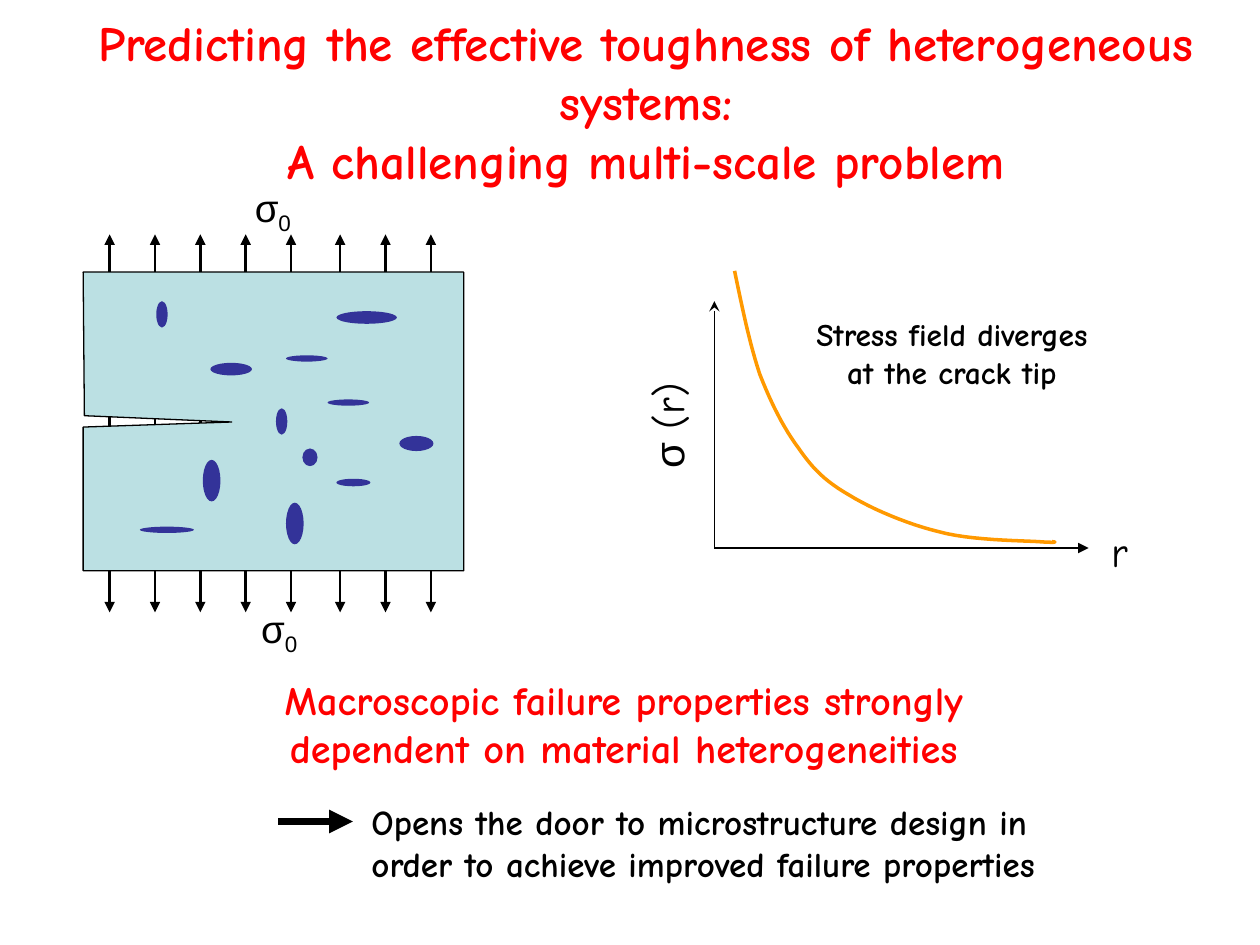
from typing import NamedTuple

from lxml import etree
from pptx import Presentation
from pptx.dml.color import RGBColor
from pptx.enum.shapes import MSO_CONNECTOR, MSO_SHAPE
from pptx.enum.text import MSO_ANCHOR, MSO_AUTO_SIZE, PP_ALIGN
from pptx.oxml.ns import qn
from pptx.util import Inches, Pt

BLACK, RED, ORANGE = "000000", "FF0000", "FF9900"
PLATE_BLUE, INCLUSION_BLUE = "BBE0E3", "333399"
COMIC, ARIAL = "Comic Neue", "Arial"


class Box(NamedTuple):
    left: float
    top: float
    width: float
    height: float


class Part(NamedTuple):
    """A stretch of text with its own font or baseline."""
    text: str
    font: str = COMIC
    subscript: bool = False


def color(value: str) -> RGBColor:
    return RGBColor.from_string(value)


def place(shape, box: Box) -> None:
    shape.left, shape.top, shape.width, shape.height = map(Inches, box)


def write(shape, paragraphs: list[list[Part]], *, size: float, ink: str = BLACK,
          bold: bool = False, align=PP_ALIGN.LEFT, wrap: bool = True) -> None:
    frame = shape.text_frame
    frame.word_wrap = wrap
    frame.auto_size = MSO_AUTO_SIZE.NONE
    frame.vertical_anchor = MSO_ANCHOR.TOP
    for index, parts in enumerate(paragraphs):
        paragraph = frame.add_paragraph() if index else frame.paragraphs[0]
        paragraph.alignment = align
        for part in parts:
            run = paragraph.add_run()
            run.text = part.text
            run.font.name, run.font.size, run.font.bold = part.font, Pt(size), bold
            run.font.color.rgb = color(ink)
            if part.subscript:
                run.font._element.set("baseline", "-25000")


def add_text(slide, box: Box, parts: list[Part], **style):
    label = slide.shapes.add_textbox(*map(Inches, box))
    write(label, [parts], **style)
    return label


def add_line(slide, start: tuple, end: tuple, width: float,
             head: str = "", tail: str = "") -> None:
    line = slide.shapes.add_connector(
        MSO_CONNECTOR.STRAIGHT, *map(Inches, (*start, *end)))
    line.line.color.rgb = color(BLACK)
    line.line.width = Pt(width)
    outline = line.line._get_or_add_ln()
    for tag, kind in (("a:headEnd", head), ("a:tailEnd", tail)):
        if kind:
            etree.SubElement(outline, qn(tag), type=kind)
    etree.SubElement(line._element.spPr, qn("a:effectLst"))


def add_outline(slide, points: list[tuple], ink: str, width: float,
                fill: str = "") -> None:
    start, *rest = [(Inches(x), Inches(y)) for x, y in points]
    builder = slide.shapes.build_freeform(*start)
    builder.add_line_segments(rest, close=bool(fill))
    outline = builder.convert_to_shape()
    outline.shadow.inherit = False
    if fill:
        outline.fill.solid()
        outline.fill.fore_color.rgb = color(fill)
    else:
        outline.fill.background()
    outline.line.color.rgb = color(ink)
    outline.line.width = Pt(width)


def add_inclusion(slide, box: Box) -> None:
    inclusion = slide.shapes.add_shape(MSO_SHAPE.OVAL, *map(Inches, box))
    inclusion.shadow.inherit = False
    inclusion.fill.solid()
    inclusion.fill.fore_color.rgb = color(INCLUSION_BLUE)
    inclusion.line.fill.background()


def bezier_points(start: tuple, segments: list[tuple], steps: int = 12) -> list[tuple]:
    """Points along a chain of cubic Bezier segments."""
    points = [start]
    for knots in segments:
        corners = (points[-1], *knots)
        for step in range(1, steps + 1):
            t = step / steps
            weights = ((1 - t) ** 3, 3 * t * (1 - t) ** 2, 3 * t * t * (1 - t), t ** 3)
            points.append(tuple(sum(w * c[axis] for w, c in zip(weights, corners))
                                for axis in (0, 1)))
    return points


INCLUSIONS = [
    Box(2.67, 2.47, 0.48, 0.1), Box(1.67, 2.88, 0.33, 0.1),
    Box(2.6, 3.17, 0.33, 0.05), Box(2.27, 2.82, 0.33, 0.05),
    Box(1.24, 2.39, 0.09, 0.21), Box(2.4, 3.56, 0.12, 0.14),
    Box(2.67, 3.8, 0.27, 0.06), Box(3.17, 3.46, 0.27, 0.12),
    Box(1.61, 3.65, 0.14, 0.33), Box(2.27, 3.99, 0.14, 0.33),
    Box(1.11, 4.18, 0.43, 0.05), Box(2.19, 3.24, 0.09, 0.21),
]
CRACKED_PLATE = [(0.66, 4.53), (3.68, 4.53), (3.68, 2.16), (0.66, 2.16),
                 (0.67, 3.3), (1.84, 3.35), (0.66, 3.39)]
STRESS_START = (5.83, 2.15)
STRESS_SEGMENTS = [
    ((5.89, 2.44), (5.95, 2.73), (6.03, 2.97)),
    ((6.12, 3.2), (6.22, 3.4), (6.34, 3.56)),
    ((6.45, 3.72), (6.55, 3.82), (6.74, 3.93)),
    ((6.92, 4.04), (7.2, 4.16), (7.45, 4.22)),
    ((7.7, 4.29), (8.1, 4.29), (8.25, 4.3)),
    ((8.4, 4.31), (8.38, 4.3), (8.35, 4.3)),
]


def main() -> None:
    presentation = Presentation()
    presentation.slide_width, presentation.slide_height = Inches(10), Inches(7.5)
    slide = presentation.slides.add_slide(presentation.slide_layouts[5])

    # Title
    title = slide.shapes.title
    place(title, Box(0.64, 0.05, 8.97, 1.51))
    write(title, [[Part("Predicting the effective toughness of heterogeneous systems:")],
                  [Part("A challenging multi-scale problem")]],
          size=28, ink=RED, bold=True, align=PP_ALIGN.CENTER)

    # Loading arrows behind the plate: five, a slightly wider gap, then three
    for index in range(8):
        x = 0.87 + 0.36 * index + (0.03 if index >= 5 else 0)
        add_line(slide, (x, 1.86), (x, 4.86), 1.5, head="triangle", tail="triangle")

    # Cracked plate with its inclusions and applied stress
    add_outline(slide, CRACKED_PLATE, BLACK, 0.75, fill=PLATE_BLUE)
    for inclusion in INCLUSIONS:
        add_inclusion(slide, inclusion)
    for left, top in ((1.92, 1.41), (1.97, 4.75)):
        add_text(slide, Box(left, top, 0.49, 0.47),
                 [Part("σ", ARIAL), Part("0", ARIAL, subscript=True)],
                 size=22, align=PP_ALIGN.CENTER, wrap=False)

    # Stress against distance from the crack tip
    origin = (5.67, 4.35)
    add_line(slide, (5.67, 2.39), origin, 0.75, head="stealth")
    add_line(slide, origin, (8.64, 4.35), 0.75, tail="triangle")
    add_outline(slide, bezier_points(STRESS_START, STRESS_SEGMENTS), ORANGE, 2)
    stress_label = add_text(slide, Box(4.85, 3.12, 0.9, 0.5),
                            [Part("σ", ARIAL), Part(" (r)")], size=24, wrap=False)
    stress_label.rotation = 270
    add_text(slide, Box(8.72, 4.12, 0.36, 0.5), [Part("r")], size=24, wrap=False)
    add_text(slide, Box(6.31, 2.45, 2.49, 1.01),
             [Part("Stress field diverges at the crack tip")],
             size=18, bold=True, align=PP_ALIGN.CENTER)

    # Conclusions
    add_text(slide, Box(1.45, 5.31, 7.01, 0.88),
             [Part("Macroscopic failure properties strongly dependent on "
                   "material heterogeneities")],
             size=23, ink=RED, bold=True, align=PP_ALIGN.CENTER)
    add_line(slide, (2.21, 6.52), (2.8, 6.52), 4.5, tail="triangle")
    add_text(slide, Box(2.85, 6.3, 5.54, 1.11),
             [Part("Opens the door to microstructure design in order to "
                   "achieve improved failure properties")],
             size=20, bold=True)

    presentation.save("out.pptx")


if __name__ == "__main__":
    main()
